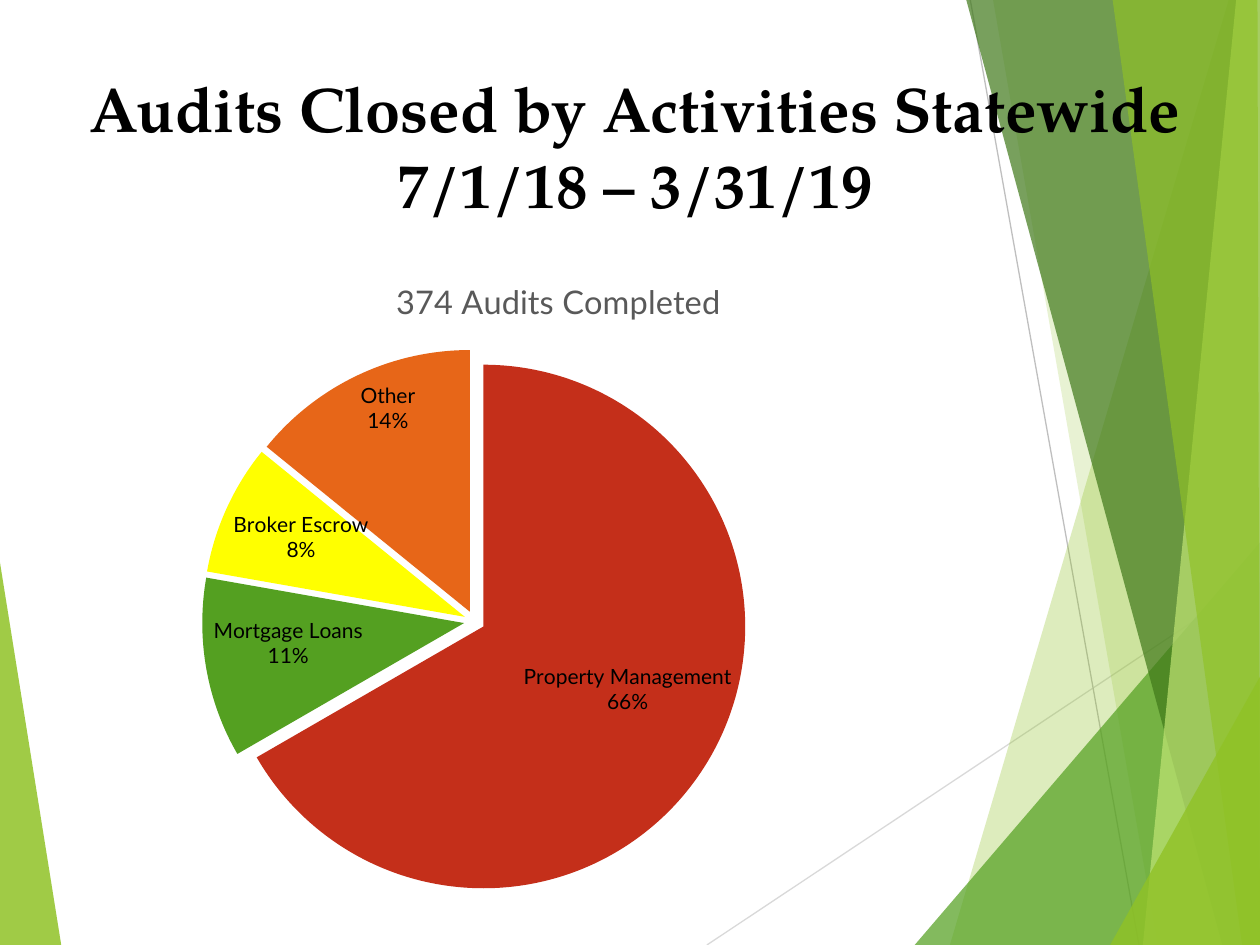
"""Build a slide with a pie of closed audits beside a fan of green bands."""
from copy import deepcopy
from dataclasses import dataclass
from typing import Any

from lxml import etree
from pptx import Presentation, util as u
from pptx.chart import data
from pptx.dml.color import RGBColor
from pptx.enum import chart as ch, text
from pptx.oxml import parse_xml
from pptx.oxml.ns import nsdecls, qn

WIDE, HIGH, EDGE = 25.4, 19.05, 25.43
C15 = "http://schemas.microsoft.com/office/drawing/2012/chart"


@dataclass(frozen=True)
class Theme:
    """Colours, faces and type sizes."""
    lime: str = "90C226"
    leaf: str = "54A021"
    moss: str = "3F7819"
    pale: str = "C0E474"
    ink: str = "000000"
    grey: str = "595959"
    serif: str = "TeX Gyre Pagella"
    sans: str = "Lato"
    head: float = 36
    sub: float = 18.6
    label: float = 12


@dataclass(frozen=True)
class Facet:
    """A tinted polygon, corners in centimetres."""
    pts: tuple[tuple[float, float], ...]
    tint: str
    alpha: int


@dataclass(frozen=True)
class Rule:
    """A thin straight line, ends in centimetres."""
    start: tuple[float, float]
    end: tuple[float, float]
    tint: str


@dataclass(frozen=True)
class Slice:
    """One share of the pie."""
    name: str
    share: int
    tint: str


T = Theme()


def band(top: float, foot: float, tint: str, alpha: int) -> Facet:
    """Return a full-height band that reaches the right edge."""
    return Facet(((top, 0), (foot, HIGH), (EDGE, HIGH), (EDGE, 0)), tint, alpha)


def peak(foot: float, rise: float, tint: str, alpha: int) -> Facet:
    """Return a triangle in the lower right corner."""
    return Facet(((foot, HIGH), (EDGE, rise), (EDGE, HIGH)), tint, alpha)


WEDGE = Facet(((-0.03, 11.15), (1.24, 19.08), (-0.03, HIGH)), T.lime, 85)
RULES = (
    Rule((14.25, HIGH), (EDGE, 11.61), "D9D9D9"),
    Rule((19.56, 0), (22.96, HIGH), "BFBFBF"),
)
FAN = (
    band(24.77, 19.15, T.lime, 30),
    band(20.02, 23.34, T.lime, 20),
    peak(18.44, 10.9, T.leaf, 72),
    band(19.48, 24.64, T.moss, 70),
    band(24.92, 23.04, T.pale, 70),
    Facet(((22.43, 0), (25.04, HIGH), (WIDE, HIGH), (25.35, 0)), T.lime, 65),
    peak(22.38, 13.59, T.lime, 80),
)
SLICES = (
    Slice("Property Management", 66, "C42F1A"),
    Slice("Mortgage Loans", 11, T.leaf),
    Slice("Broker Escrow", 8, "FFFF00"),
    Slice("Other", 14, "E76618"),
)


def put(obj: Any, form: dict[str, Any]) -> None:
    """Set each format value on an object."""
    for key, val in form.items():
        setattr(obj, key, val)


def style(font: Any, face: str, size: float, tint: str, bold: bool = False) -> None:
    """Dress a font."""
    put(font, {"name": face, "size": u.Pt(size), "bold": bold})
    font.color.rgb = RGBColor.from_string(tint)


def paint(fill: Any, tint: str) -> None:
    """Give a fill one solid colour."""
    fill.solid()
    fill.fore_color.rgb = RGBColor.from_string(tint)


def draw_facet(slide: Any, facet: Facet) -> None:
    """Draw a translucent polygon without outline."""
    pts = [(u.Cm(x), u.Cm(y)) for x, y in facet.pts]
    pen = slide.shapes.build_freeform(*pts[0])
    pen.add_line_segments(pts[1:], close=True)
    shape = pen.convert_to_shape()
    shape.shadow.inherit = False
    paint(shape.fill, facet.tint)
    shape.line.fill.background()
    clr = shape._element.spPr.find(".//" + qn("a:srgbClr"))
    etree.SubElement(clr, qn("a:alpha")).set("val", str(facet.alpha * 1000))


def draw_rule(slide: Any, rule: Rule) -> None:
    """Draw a thin line without shadow."""
    ends = [u.Cm(v) for v in rule.start + rule.end]
    line = slide.shapes.add_connector(1, *ends)
    line.line.width = u.Pt(0.75)
    line.line.color.rgb = RGBColor.from_string(rule.tint)
    etree.SubElement(line._element.spPr, qn("a:effectLst"))


def draw_head(slide: Any, words: str) -> None:
    """Write the slide heading."""
    box = slide.shapes.add_textbox(u.Cm(1.47), u.Cm(1.27), u.Cm(22.66), u.Cm(3.33))
    put(box.text_frame, {"word_wrap": True, "vertical_anchor": text.MSO_ANCHOR.MIDDLE})
    para = box.text_frame.paragraphs[0]
    put(para, {"text": words, "alignment": text.PP_ALIGN.CENTER})
    style(para.runs[0].font, T.serif, T.head, T.ink, True)


def layout(frac: dict[str, float], lead: str = "") -> Any:
    """Return a manual layout in fractions of the chart."""
    sizes = "".join(f'<c:{k} val="{v}"/>' for k, v in frac.items())
    return parse_xml(f'<c:layout {nsdecls("c")}><c:manualLayout>{lead}{sizes}'
                     "</c:manualLayout></c:layout>")


def place(part: Any, frac: dict[str, float], spot: int, lead: str = "") -> None:
    """Fix a chart part at edge-based fractions."""
    for old in part.findall(qn("c:layout")):
        part.remove(old)
    modes = "".join(f'<c:{k}Mode val="edge"/>' for k in "xy")
    part.insert(spot, layout(frac, lead + modes))


def shift(labels: Any, frac: dict[str, float], wide: float, high: float) -> None:
    """Move the first label and wrap it to a width."""
    label = parse_xml(f'<c:dLbl {nsdecls("c")}><c:idx val="0"/></c:dLbl>')
    label.append(layout(frac))
    for child in labels:
        if child.tag != qn("c:showLeaderLines"):
            label.append(deepcopy(child))
    label.append(parse_xml(
        f'<c:extLst {nsdecls("c")}><c:ext uri="{{CE6537A1-D6FC-4f65-9D91-7224C49458BB}}" '
        f'xmlns:c15="{C15}"><c15:layout><c:manualLayout><c:w val="{wide}"/>'
        f'<c:h val="{high}"/></c:manualLayout></c15:layout></c:ext></c:extLst>'
    ))
    labels.insert(0, label)


def draw_pie(slide: Any, title: str) -> None:
    """Draw the exploded pie with its labels."""
    feed = data.CategoryChartData()
    feed.categories = [s.name for s in SLICES]
    feed.add_series("Series 1", [s.share for s in SLICES])
    pie = slide.shapes.add_chart(
        ch.XL_CHART_TYPE.PIE, u.Cm(1.27), u.Cm(5.08), u.Cm(18.85), u.Cm(13.54), feed
    ).chart
    put(pie, {"has_legend": False, "has_title": True})
    style(pie.font, T.sans, 10, T.ink)
    pie.chart_title.text_frame.text = title
    style(pie.chart_title.text_frame.paragraphs[0].runs[0].font, T.sans, T.sub, T.grey)
    place(pie.chart_title._element, {"x": 0.35, "y": 0.03}, 1)
    pie.plots[0].vary_by_categories = True
    series = pie.plots[0].series[0]
    labels = series.data_labels
    put(labels, {
        "show_category_name": True, "show_value": True, "show_percentage": False,
        "number_format": '0"%"', "number_format_is_linked": False,
        "position": ch.XL_LABEL_POSITION.INSIDE_END,
    })
    style(labels.font, T.sans, T.label, T.ink)
    mark = parse_xml(f'<c:separator {nsdecls("c")}>\n</c:separator>')
    labels._element.find(qn("c:showBubbleSize")).addnext(mark)
    shift(labels._element, {"x": 0.03, "y": -0.06}, 0.16, 0.12)
    for i, part in enumerate(SLICES):
        paint(series.points[i].format.fill, part.tint)
    for point in series._element.findall(qn("c:dPt")):
        burst = parse_xml(f'<c:explosion {nsdecls("c")} val="4"/>')
        point.find(qn("c:spPr")).addprevious(burst)
    place(pie._chartSpace.chart.plotArea, {"x": 0.16, "y": 0.16, "w": 0.56, "h": 0.78},
          0, '<c:layoutTarget val="inner"/>')


def main() -> None:
    """Build and save the slide."""
    deck = Presentation()
    put(deck, {"slide_width": u.Cm(WIDE), "slide_height": u.Cm(HIGH)})
    slide = deck.slides.add_slide(deck.slide_layouts[6])
    draw_facet(slide, WEDGE)
    for rule in RULES:
        draw_rule(slide, rule)
    for facet in FAN:
        draw_facet(slide, facet)
    draw_head(slide, "Audits Closed by Activities Statewide 7/1/18 – 3/31/19")
    draw_pie(slide, "374 Audits Completed")
    deck.save("out.pptx")


if __name__ == "__main__":
    main()
